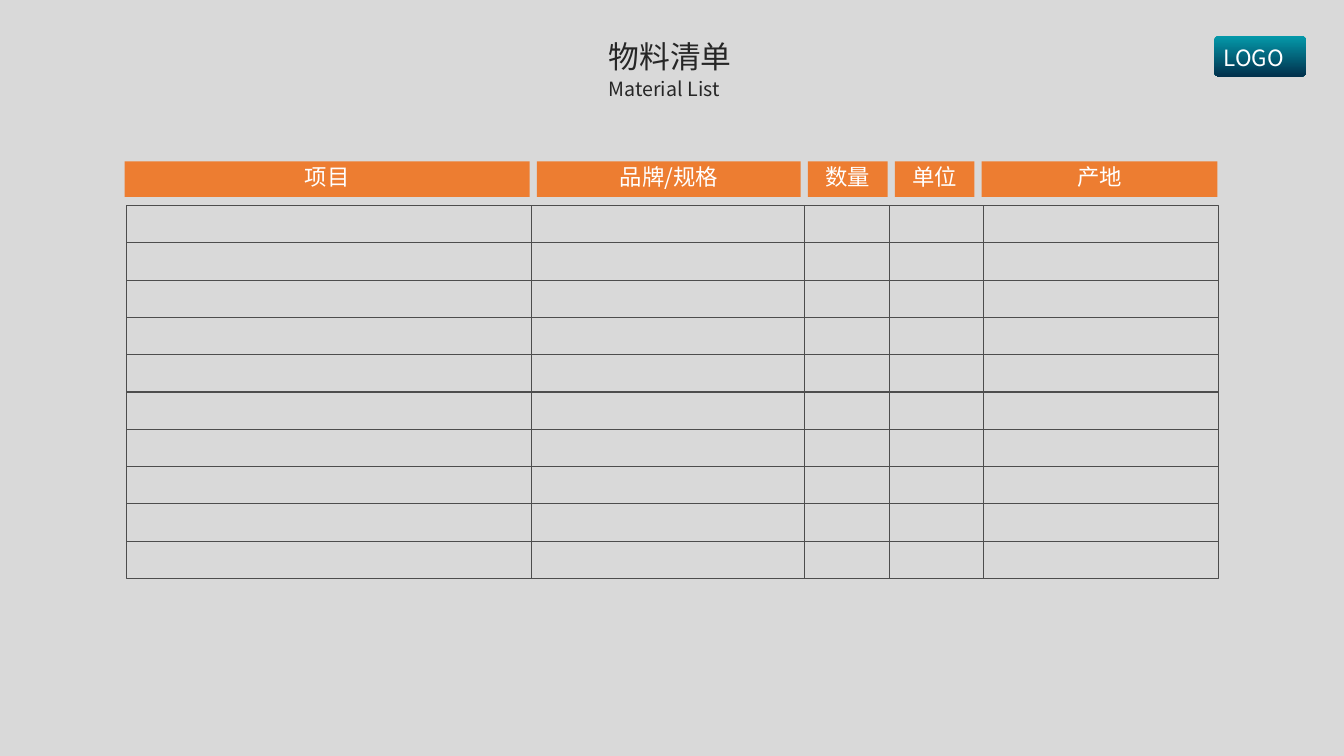
from lxml import etree
from pptx import Presentation
from pptx.dml.color import RGBColor
from pptx.enum.shapes import MSO_CONNECTOR, MSO_SHAPE
from pptx.enum.text import MSO_ANCHOR, PP_ALIGN
from pptx.oxml.ns import qn
from pptx.util import Cm, Pt

RECT, ROUNDED = MSO_SHAPE.RECTANGLE, MSO_SHAPE.ROUNDED_RECTANGLE
STRAIGHT = MSO_CONNECTOR.STRAIGHT
MIDDLE = MSO_ANCHOR.MIDDLE
LEFT, CENTER, JUSTIFY = PP_ALIGN.LEFT, PP_ALIGN.CENTER, PP_ALIGN.JUSTIFY

THEME = {
    "font": "Noto Sans CJK SC",
    "background": "D9D9D9", "ink": "262626", "white": "FFFFFF",
    "header": "ED7D31", "grid": "4D4D4D",
    "badge_top": "049AAB", "badge_bottom": "01304C",
    "title": 22, "subtitle": 14, "label": 16, "grid_line": 0.75,
}

# Lengths in cm
TITLES = [  # text, size, (left, top, width, height)
    ("物料清单", "title", (15.09, 0.82, 4.85, 1.19)),
    ("Material List", "subtitle", (15.09, 1.82, 5.31, 0.86)),
]
BADGE = ("LOGO", (30.6, 0.9, 2.32, 1.03))
BADGE_TEXT = (30.59, 0.99, 2.18, 0.94)
COLUMNS = [  # heading, heading width, column width
    ("项目", 10.21, 10.22),
    ("品牌/规格", 6.65, 6.88),
    ("数量", 2.01, 2.14),
    ("单位", 2.01, 2.36),
    ("产地", 5.94, 5.94),
]
HEADER_LEFT, HEADER_TOP, HEADER_HEIGHT, HEADER_GAP = 3.14, 4.07, 0.89, 0.18
GRID_LEFT, GRID_TOP, ROW_HEIGHT, ROWS = 3.18, 5.18, 0.94, 10


def color(name):
    return RGBColor.from_string(THEME[name])


def box(place):
    return [Cm(v) for v in place]


def write(sp, text, size, ink, align):
    tf = sp.text_frame
    tf.word_wrap = True
    tf.text = text
    p = tf.paragraphs[0]
    p.alignment = align
    r = p.runs[0]
    r.font.size = Pt(THEME[size])
    r.font.name = THEME["font"]
    r.font.color.rgb = color(ink)
    etree.SubElement(r.font._element, qn("a:ea"), typeface=THEME["font"])
    return p


def add_panel(slide, kind, place):
    """Add a shape with neither fill, outline nor shadow."""
    sp = slide.shapes.add_shape(kind, *box(place))
    sp.shadow.inherit = False
    sp.fill.background()
    sp.line.fill.background()
    sp.text_frame.vertical_anchor = MIDDLE
    return sp


def draw_grid_line(line):
    line.color.rgb = color("grid")
    line.width = Pt(THEME["grid_line"])


def add_badge(slide, text, place):
    sp = add_panel(slide, ROUNDED, place)
    sp.adjustments[0] = 0.12
    sp.fill.gradient()
    sp.fill.gradient_angle = 270
    for stop, name, position in zip(
            sp.fill.gradient_stops, ("badge_top", "badge_bottom"), (0, 1)):
        stop.color.rgb = color(name)
        stop.position = position
    label = slide.shapes.add_textbox(*box(BADGE_TEXT))
    write(label, text, "label", "white", LEFT)


def add_header(slide):
    left = HEADER_LEFT
    for heading, width, _ in COLUMNS:
        sp = add_panel(slide, RECT, (left, HEADER_TOP, width, HEADER_HEIGHT))
        sp.fill.solid()
        sp.fill.fore_color.rgb = color("header")
        write(sp, heading, "label", "white", CENTER).line_spacing = 0.8
        left += width + HEADER_GAP


def add_grid(slide):
    for row in range(ROWS):
        left, top = GRID_LEFT, GRID_TOP + row * ROW_HEIGHT
        for _, _, width in COLUMNS:
            sp = add_panel(slide, RECT, (left, top, width, ROW_HEIGHT))
            draw_grid_line(sp.line)
            left += width


def add_divider(slide):
    """Draw the full-height line after the first column."""
    x = GRID_LEFT + COLUMNS[0][2]
    ends = (x, GRID_TOP, x, GRID_TOP + ROWS * ROW_HEIGHT)
    divider = slide.shapes.add_connector(STRAIGHT, *box(ends))
    draw_grid_line(divider.line)
    etree.SubElement(divider._element.spPr, qn("a:effectLst"))


def main():
    prs = Presentation()
    prs.slide_width, prs.slide_height = Cm(33.87), Cm(19.05)
    slide = prs.slides.add_slide(prs.slide_layouts[6])
    slide.background.fill.solid()
    slide.background.fill.fore_color.rgb = color("background")

    add_badge(slide, *BADGE)
    for text, size, place in TITLES:
        write(slide.shapes.add_textbox(*box(place)), text, size, "ink", JUSTIFY)
    add_grid(slide)
    add_divider(slide)
    add_header(slide)
    prs.save("out.pptx")


if __name__ == "__main__":
    main()
